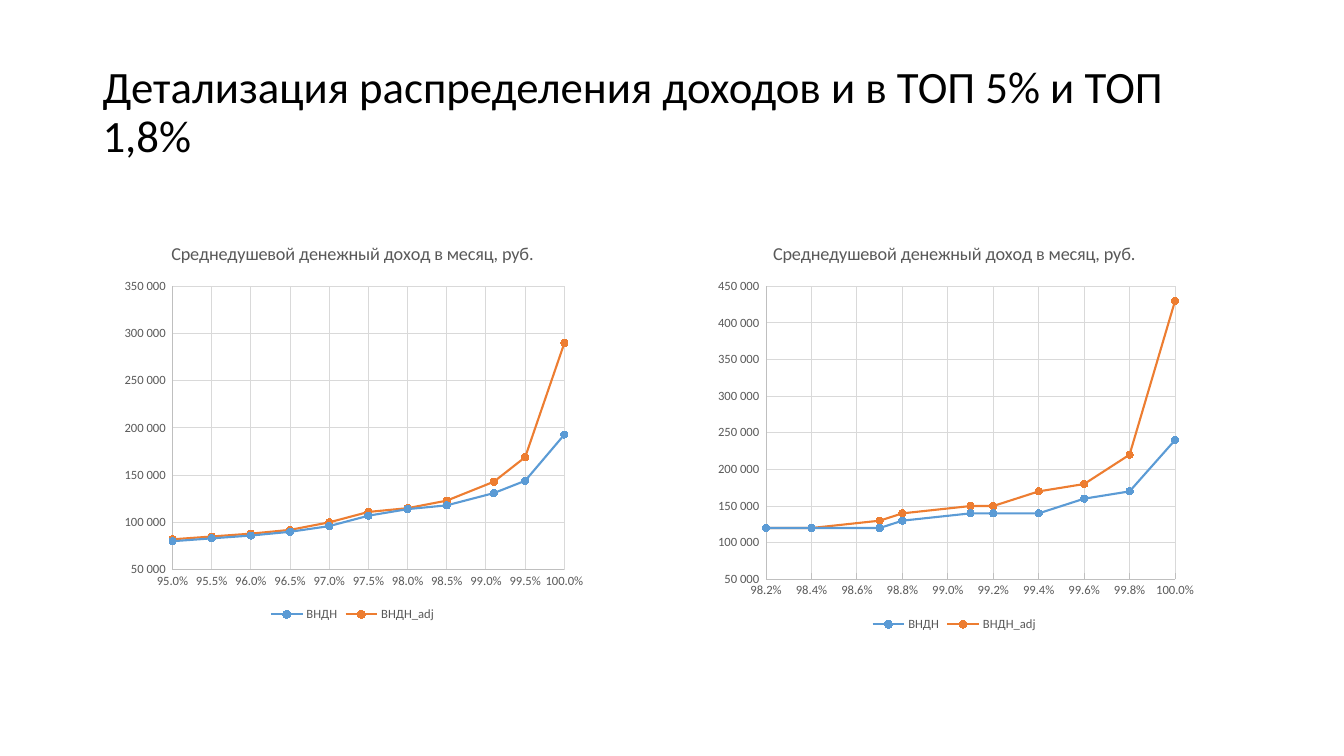
from pptx import Presentation
from pptx.chart.data import XyChartData
from pptx.dml.color import RGBColor as RGB
from pptx.enum.chart import XL_CHART_TYPE as Kind, XL_LEGEND_POSITION as Pos
from pptx.enum.chart import XL_MARKER_STYLE as Mark, XL_TICK_MARK as Tick
from pptx.enum.text import MSO_ANCHOR as Anchor, PP_ALIGN as Align
from pptx.oxml import parse_xml
from pptx.oxml.ns import nsdecls, qn
from pptx.util import Cm, Pt

# Theme: colours and type sizes
THEME = {
    "ink": RGB(0, 0, 0),
    "gray": RGB(0x59, 0x59, 0x59),
    "axis": RGB(0xBF, 0xBF, 0xBF),
    "grid": RGB(0xD9, 0xD9, 0xD9),
    "lines": [RGB(0x5B, 0x9B, 0xD5), RGB(0xED, 0x7D, 0x31)],
    "font": "Calibri",
    "title": Pt(32),
    "head": Pt(13),
    "label": Pt(9),
}


def style(font, size, color="gray"):
    fmt = {"name": THEME["font"], "size": THEME[size], "bold": False}
    for key, val in fmt.items():
        setattr(font, key, val)
    font.color.rgb = THEME[color]


def stroke(line, color, width):
    line.color.rgb = color
    line.width = Pt(width)


# Data: x in percent, incomes in thousand roubles
HEAD = "Среднедушевой денежный доход в месяц, руб."
NAMES = ["ВНДН", "ВНДН_adj"]
CHARTS = [
    {
        "box": (2.82, 5.66, 12.12, 10.11),
        "plot": (0.126, 0.154, 0.815, 0.706),
        "x": [95, 95.5, 96, 96.5, 97, 97.5, 98, 98.5, 99.1, 99.5, 100],
        "y": [[80, 83, 86, 90, 96, 107, 114, 118, 131, 144, 193],
              [82, 85, 88, 92, 100, 111, 115, 123, 143, 169, 290]],
        "low": 0.95, "step": 0.005, "top": 350000, "tick": Tick.NONE,
    },
    {
        "box": (17.76, 5.66, 12.57, 10.36),
        "plot": (0.123, 0.15, 0.82, 0.713),
        "x": [98.2, 98.4, 98.7, 98.8, 99.1, 99.2, 99.4, 99.6, 99.8, 100],
        "y": [[120, 120, 120, 130, 140, 140, 140, 160, 170, 240],
              [120, 120, 130, 140, 150, 150, 170, 180, 220, 430]],
        "low": 0.982, "step": 0.002, "top": 450000, "tick": Tick.INSIDE,
    },
]

# Slide
deck = Presentation()
deck.slide_width, deck.slide_height = Cm(33.87), Cm(19.05)
slide = deck.slides.add_slide(deck.slide_layouts[5])

# Title
title = slide.shapes.title
place = {"left": 2.33, "top": 1.02, "width": 29.75, "height": 3.68}
for key, val in place.items():
    setattr(title, key, Cm(val))
title.text_frame.text = "Детализация распределения доходов и в ТОП 5% и ТОП 1,8%"
title.text_frame.vertical_anchor = Anchor.MIDDLE
para = title.text_frame.paragraphs[0]
para.alignment, para.line_spacing = Align.LEFT, 0.9
style(para.runs[0].font, "title", "ink")

# Charts
for item in CHARTS:
    data = XyChartData()
    for name, vals in zip(NAMES, item["y"]):
        row = data.add_series(name)
        for x, y in zip(item["x"], vals):
            row.add_data_point(round(x / 100, 3), y * 1000)
    box = [Cm(n) for n in item["box"]]
    chart = slide.shapes.add_chart(Kind.XY_SCATTER_LINES, *box, data).chart
    style(chart.font, "label")

    # Heading and legend
    chart.has_title = True
    chart.chart_title.text_frame.text = HEAD
    style(chart.chart_title.text_frame.paragraphs[0].runs[0].font, "head")
    chart.chart_title.include_in_layout = False
    chart.has_legend = True
    chart.legend.position = Pos.BOTTOM
    chart.legend.include_in_layout = False
    style(chart.legend.font, "label")

    # Axes
    across = {"minimum_scale": item["low"], "maximum_scale": 1,
              "major_unit": item["step"], "major_tick_mark": item["tick"]}
    upward = {"minimum_scale": 50000, "maximum_scale": item["top"],
              "major_unit": 50000, "major_tick_mark": Tick.NONE}
    for axis, fmt, code in ((chart.category_axis, across, "0.0%"),
                            (chart.value_axis, upward, "# ##0_ ")):
        for key, val in fmt.items():
            setattr(axis, key, val)
        axis.minor_tick_mark = Tick.NONE
        axis.has_major_gridlines = True
        stroke(axis.major_gridlines.format.line, THEME["grid"], 0.75)
        stroke(axis.format.line, THEME["axis"], 0.75)
        axis.tick_labels.number_format = code
        axis.tick_labels.number_format_is_linked = False
        style(axis.tick_labels.font, "label")

    # Series
    for line, color in zip(chart.plots[0].series, THEME["lines"]):
        line.smooth = False
        stroke(line.format.line, color, 1.5)
        line.marker.style, line.marker.size = Mark.CIRCLE, 5
        line.marker.format.fill.solid()
        line.marker.format.fill.fore_color.rgb = color
        stroke(line.marker.format.line, color, 0.75)
    chart.plots[0].vary_by_categories = False

    # Inner plot area
    area = chart.element.find(".//" + qn("c:plotArea"))
    for old in area.findall(qn("c:layout")):
        area.remove(old)
    spots = "".join(f'<c:{key} val="{val}"/>'
                    for key, val in zip("xywh", item["plot"]))
    area.insert(0, parse_xml(
        f'<c:layout {nsdecls("c")}><c:manualLayout>'
        '<c:layoutTarget val="inner"/><c:xMode val="edge"/>'
        f'<c:yMode val="edge"/>{spots}</c:manualLayout></c:layout>'))

deck.save("out.pptx")
